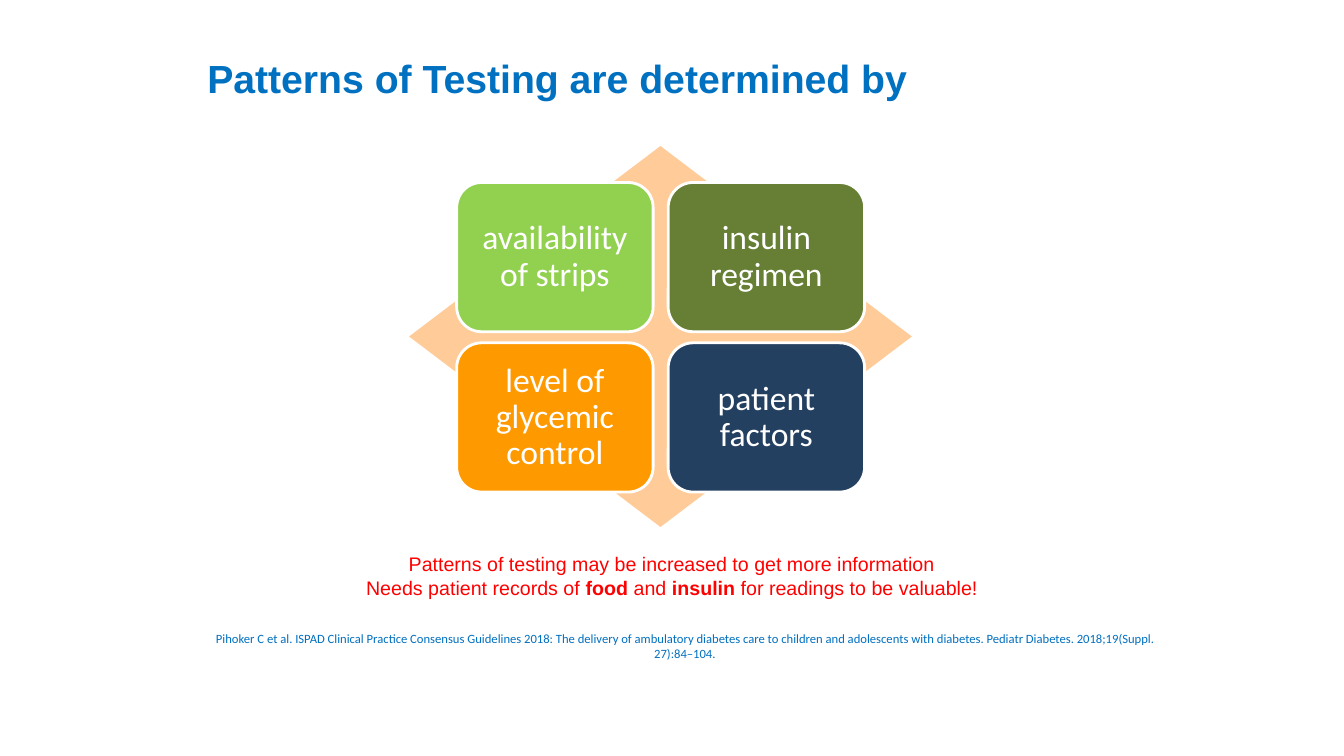
from dataclasses import dataclass

from pptx import Presentation
from pptx.dml.color import RGBColor
from pptx.enum.shapes import MSO_SHAPE
from pptx.enum.text import MSO_ANCHOR, MSO_AUTO_SIZE, PP_ALIGN
from pptx.shapes.autoshape import Shape
from pptx.slide import Slide
from pptx.util import Cm, Pt

COLOURS = {
    "white": "FFFFFF",
    "blue": "0070C0",
    "red": "FF0000",
    "peach": "FFCC99",
    "lime": "92D050",
    "olive": "667F34",
    "orange": "FF9900",
    "navy": "244061",
}


@dataclass(frozen=True)
class Box:
    """Position and size in centimetres."""
    left: float
    top: float
    width: float
    height: float

    def lengths(self) -> tuple[Cm, Cm, Cm, Cm]:
        return Cm(self.left), Cm(self.top), Cm(self.width), Cm(self.height)


@dataclass(frozen=True)
class Factor:
    label: str
    colour: str


@dataclass(frozen=True)
class Phrase:
    text: str
    bold: bool = False


FACTORS = [
    Factor("availability of strips", "lime"),
    Factor("insulin regimen", "olive"),
    Factor("level of glycemic control", "orange"),
    Factor("patient factors", "navy"),
]
COLUMNS = 2
FIRST_CARD = Box(11.51, 4.6, 4.95, 3.76)
COLUMN_STEP, ROW_STEP = 5.33, 4.04

ADVICE = [
    [Phrase("Patterns of testing may be increased to get more information")],
    [
        Phrase("Needs patient records of "),
        Phrase("food", bold=True),
        Phrase(" and "),
        Phrase("insulin", bold=True),
        Phrase(" for readings to be valuable!"),
    ],
]
CITATION = (
    "Pihoker C et al. ISPAD Clinical Practice Consensus Guidelines 2018: "
    "The delivery of ambulatory diabetes care to children and adolescents with "
    "diabetes. Pediatr Diabetes. 2018;19(Suppl. 27):84–104."
)


def rgb(name: str) -> RGBColor:
    return RGBColor.from_string(COLOURS[name])


def write(shape: Shape, lines: list[list[Phrase]], font: str, size: int, colour: str,
          spacing: float = 1.0, anchor: MSO_ANCHOR = MSO_ANCHOR.MIDDLE) -> None:
    """Fill the shape with centred paragraphs, one per line of phrases."""
    frame = shape.text_frame
    frame.word_wrap = True
    frame.auto_size = MSO_AUTO_SIZE.NONE
    frame.vertical_anchor = anchor
    for index, phrases in enumerate(lines):
        paragraph = frame.paragraphs[0] if index == 0 else frame.add_paragraph()
        paragraph.alignment = PP_ALIGN.CENTER
        paragraph.line_spacing = spacing
        paragraph.font.name = font
        paragraph.font.size = Pt(size)
        paragraph.font.color.rgb = rgb(colour)
        for phrase in phrases:
            run = paragraph.add_run()
            run.text = phrase.text
            if phrase.bold:
                run.font.bold = True


def add_filled(slide: Slide, preset: MSO_SHAPE, box: Box, fill: str,
               outlined: bool = True) -> Shape:
    shape = slide.shapes.add_shape(preset, *box.lengths())
    shape.shadow.inherit = False
    shape.fill.solid()
    shape.fill.fore_color.rgb = rgb(fill)
    if outlined:
        shape.line.color.rgb = rgb("white")
        shape.line.width = Pt(2)
    else:
        shape.line.fill.background()
    return shape


def add_title(slide: Slide) -> None:
    title = slide.shapes.title
    title.left, title.top, title.width, title.height = Box(4.45, 1.14, 19.18, 1.65).lengths()
    write(title, [[Phrase("Patterns of Testing are determined by")]], "Arial", 28, "blue")
    title.text_frame.paragraphs[0].font.bold = True


def add_factor_matrix(slide: Slide) -> None:
    add_filled(slide, MSO_SHAPE.DIAMOND, Box(10.31, 3.68, 12.67, 9.6), "peach", outlined=False)
    for index, factor in enumerate(FACTORS):
        row, column = divmod(index, COLUMNS)
        box = Box(FIRST_CARD.left + column * COLUMN_STEP, FIRST_CARD.top + row * ROW_STEP,
                  FIRST_CARD.width, FIRST_CARD.height)
        card = add_filled(slide, MSO_SHAPE.ROUNDED_RECTANGLE, box, factor.colour)
        write(card, [[Phrase(factor.label)]], "Calibri", 24, "white", spacing=0.9)


def add_advice(slide: Slide) -> None:
    callout = add_filled(slide, MSO_SHAPE.ROUNDED_RECTANGULAR_CALLOUT,
                         Box(4.45, 13.44, 24.97, 2.13), "white")
    callout.adjustments[0] = 0.13
    callout.adjustments[1] = -0.64
    write(callout, ADVICE, "Arial", 14, "red")


def add_citation(slide: Slide) -> None:
    citation = slide.shapes.add_textbox(*Box(4.88, 15.77, 24.76, 1.02).lengths())
    write(citation, [[Phrase(CITATION)]], "Calibri", 9, "blue", anchor=MSO_ANCHOR.TOP)


def main() -> None:
    presentation = Presentation()
    presentation.slide_width = Cm(33.87)
    presentation.slide_height = Cm(19.05)
    slide = presentation.slides.add_slide(presentation.slide_layouts.get_by_name("Title Only"))
    add_title(slide)
    add_factor_matrix(slide)
    add_advice(slide)
    add_citation(slide)
    presentation.save("out.pptx")


if __name__ == "__main__":
    main()
